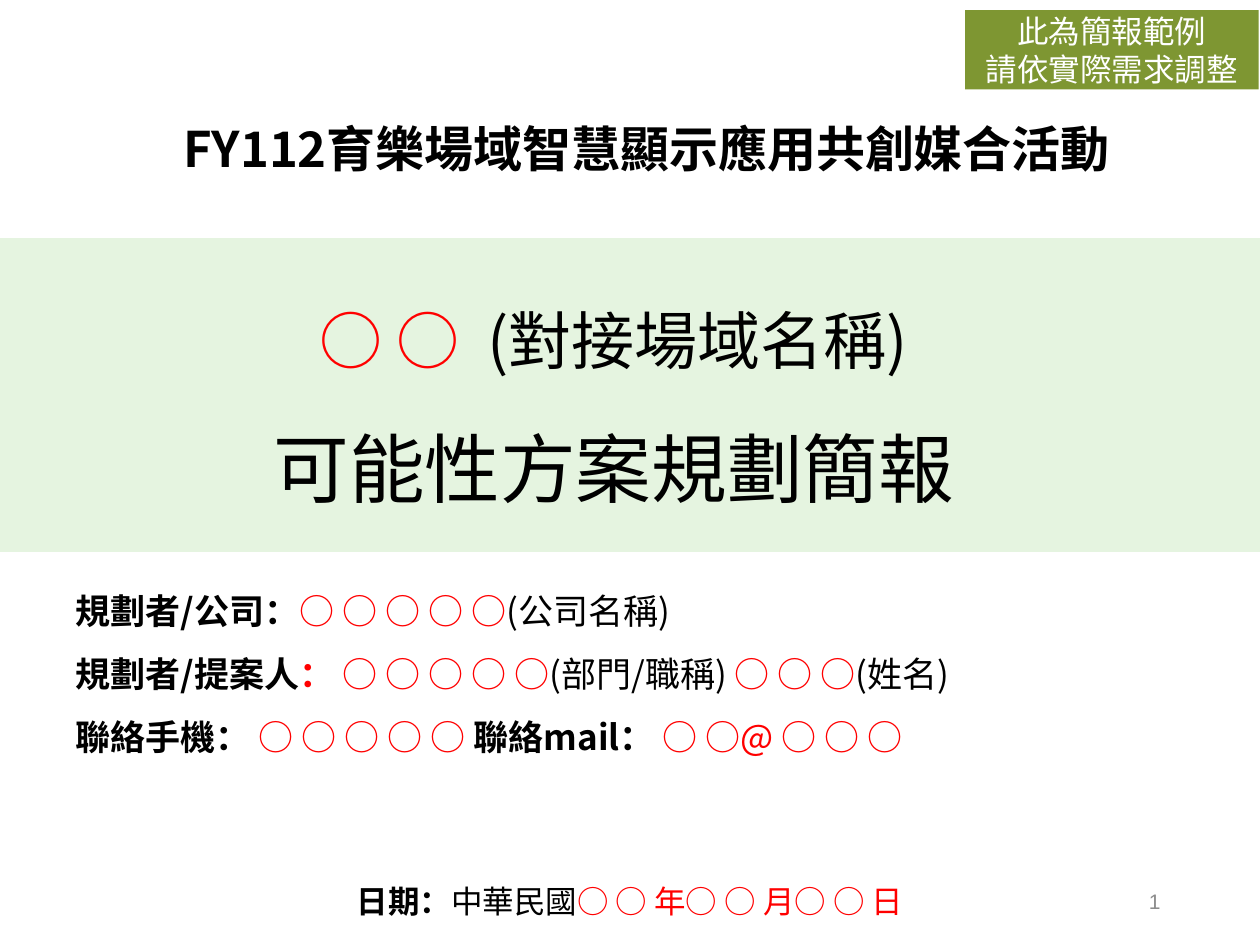
from copy import deepcopy

from lxml import etree
from pptx import Presentation
from pptx.dml.color import RGBColor
from pptx.enum.shapes import MSO_SHAPE
from pptx.enum.text import MSO_ANCHOR, MSO_AUTO_SIZE, PP_ALIGN
from pptx.oxml.ns import qn
from pptx.util import Inches, Pt

LEFT, CENTER, RIGHT = PP_ALIGN.LEFT, PP_ALIGN.CENTER, PP_ALIGN.RIGHT
TOP, MIDDLE, BOTTOM = MSO_ANCHOR.TOP, MSO_ANCHOR.MIDDLE, MSO_ANCHOR.BOTTOM
RECTANGLE = MSO_SHAPE.RECTANGLE
NO_AUTOFIT = MSO_AUTO_SIZE.NONE

CJK_FONT = "Noto Sans CJK SC"
COLORS = {
    "band": "E5F4E0",
    "note": "7E9632",
    "text": "000000",
    "blank": "FF0000",
    "white": "FFFFFF",
    "number": "8C8C8C",
}


def place(shape, left, top, width, height):
    shape.left, shape.top = Inches(left), Inches(top)
    shape.width, shape.height = Inches(width), Inches(height)


def prepare_frame(shape, anchor=TOP, wrap=True):
    frame = shape.text_frame
    frame.auto_size = NO_AUTOFIT
    frame.word_wrap = wrap
    frame.vertical_anchor = anchor
    return frame


def add_span(para, text, size, color="text", bold=False, font=CJK_FONT):
    span = para.add_run()
    span.text = text
    span.font.size = Pt(size)
    span.font.bold = bold
    span.font.color.rgb = RGBColor.from_string(COLORS[color])
    span.font.name = font
    east_asian = etree.SubElement(span.font._element, qn("a:ea"))
    east_asian.set("typeface", font)
    return span


def add_break(para, span):
    """Break the line, giving the break the same size as the span before it."""
    para.add_line_break()
    para._p[-1].append(deepcopy(span.font._element))


def add_box(slide, bounds, anchor=TOP, wrap=True):
    box = slide.shapes.add_textbox(*map(Inches, bounds))
    return prepare_frame(box, anchor, wrap)


def add_rectangle(slide, bounds, color):
    shape = slide.shapes.add_shape(RECTANGLE, *map(Inches, bounds))
    shape.shadow.inherit = False
    shape.fill.solid()
    shape.fill.fore_color.rgb = RGBColor.from_string(COLORS[color])
    shape.line.fill.background()
    return shape


def add_band(slide):
    """Add the pale band behind the title."""
    band = add_rectangle(slide, (0, 1.89, 10, 2.49), "band")
    slide.shapes._spTree.insert(2, band._element)


def fill_title(title):
    place(title, 0.62, 2.26, 8.5, 1.86)
    para = prepare_frame(title, BOTTOM).paragraphs[0]
    para.alignment = CENTER
    para.line_spacing = 1.5
    add_span(para, "○ ○  ", 36, "blank")
    venue = add_span(para, "(對接場域名稱)", 36)
    add_break(para, venue)
    add_span(para, "可能性方案規劃簡報", 43.2)


def fill_contacts(body):
    lines = [
        [("規劃者/公司：", "text", True), ("○ ○ ○ ○ ○", "blank", False),
         ("(公司名稱)", "text", False)],
        [("規劃者/提案人", "text", True), ("： ", "blank", True),
         ("○ ○ ○ ○ ○", "blank", False), ("(部門/職稱) ", "text", False),
         ("○ ○ ○", "blank", False), ("(姓名)", "text", False)],
        [("聯絡手機： ", "text", True), ("○ ○ ○ ○ ○ ", "blank", False),
         ("聯絡mail： ", "text", True), ("○ ○@ ○ ○ ○", "blank", False)],
    ]
    place(body, 0.5, 4.63, 8.74, 1.45)
    frame = prepare_frame(body)
    for index, line in enumerate(lines):
        para = frame.add_paragraph() if index else frame.paragraphs[0]
        para.alignment = LEFT
        para.space_before = para.space_after = Pt(6)
        for text, color, bold in line:
            add_span(para, text, 20, color, bold)


def add_date(slide):
    para = add_box(slide, (2.69, 6.95, 4.62, 0.4), wrap=False).paragraphs[0]
    para.alignment = CENTER
    add_span(para, "日期：", 18, bold=True)
    add_span(para, "中華民國", 18)
    add_span(para, "○ ○ 年○ ○ 月○ ○ 日", 18, "blank")


def add_event_name(slide):
    para = add_box(slide, (1.36, 0.89, 7.95, 0.57)).paragraphs[0]
    add_span(para, "FY112育樂場域智慧顯示應用共創媒合活動", 28, bold=True)


def add_note(slide):
    note = add_rectangle(slide, (7.66, 0.08, 2.33, 0.63), "note")
    frame = prepare_frame(note, MIDDLE)
    for index, text in enumerate(("此為簡報範例", "請依實際需求調整")):
        para = frame.add_paragraph() if index else frame.paragraphs[0]
        para.alignment = CENTER
        add_span(para, text, 18, "white", font="Arial")


def add_slide_number(slide):
    para = add_box(slide, (7.06, 6.95, 2.25, 0.4), MIDDLE).paragraphs[0]
    para.alignment = RIGHT
    number = add_span(para, "1", 12, "number", font="Arial")._r
    number.tag = qn("a:fld")
    number.set("id", "{B6F15528-21DE-4FAA-801E-634DDDAF4B2B}")
    number.set("type", "slidenum")


def main():
    deck = Presentation()
    deck.slide_width, deck.slide_height = Inches(10), Inches(7.5)
    slide = deck.slides.add_slide(deck.slide_layouts[0])
    add_band(slide)
    fill_title(slide.shapes.title)
    fill_contacts(slide.placeholders[1])
    add_date(slide)
    add_event_name(slide)
    add_note(slide)
    add_slide_number(slide)
    deck.save("out.pptx")


if __name__ == "__main__":
    main()
